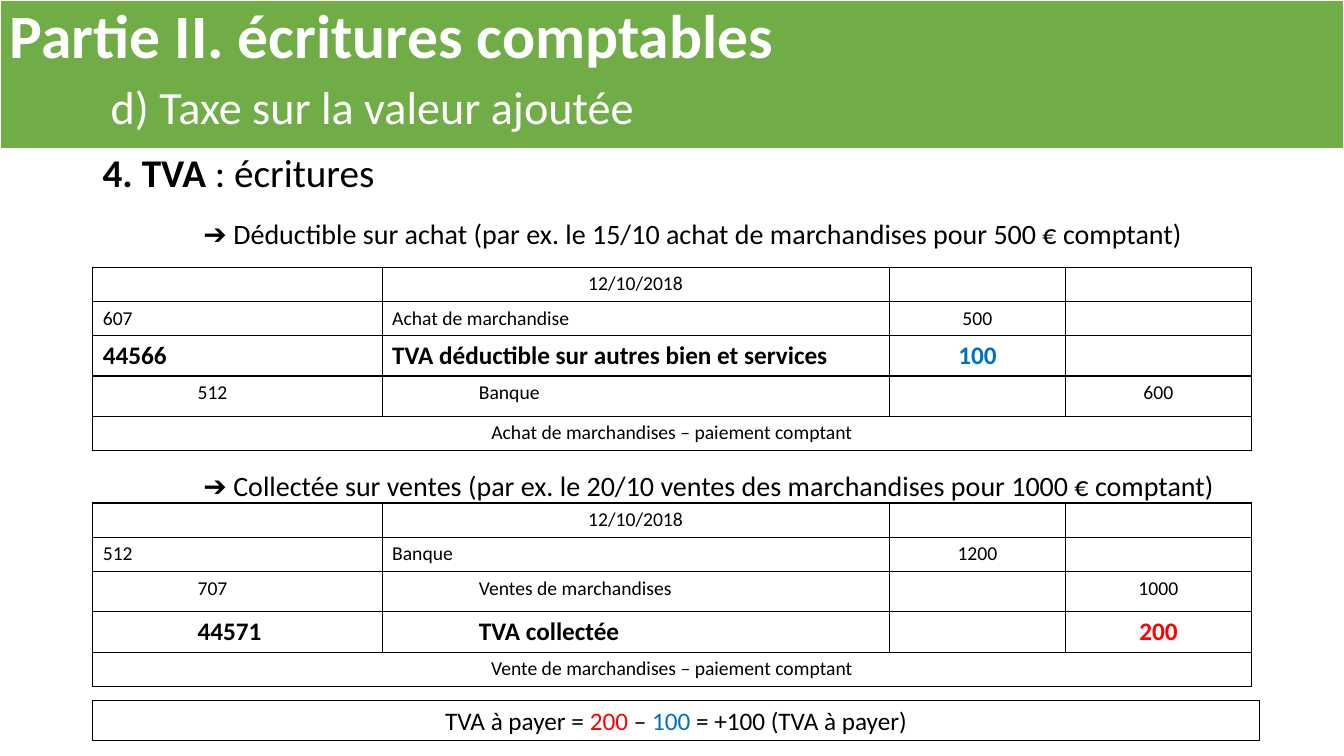
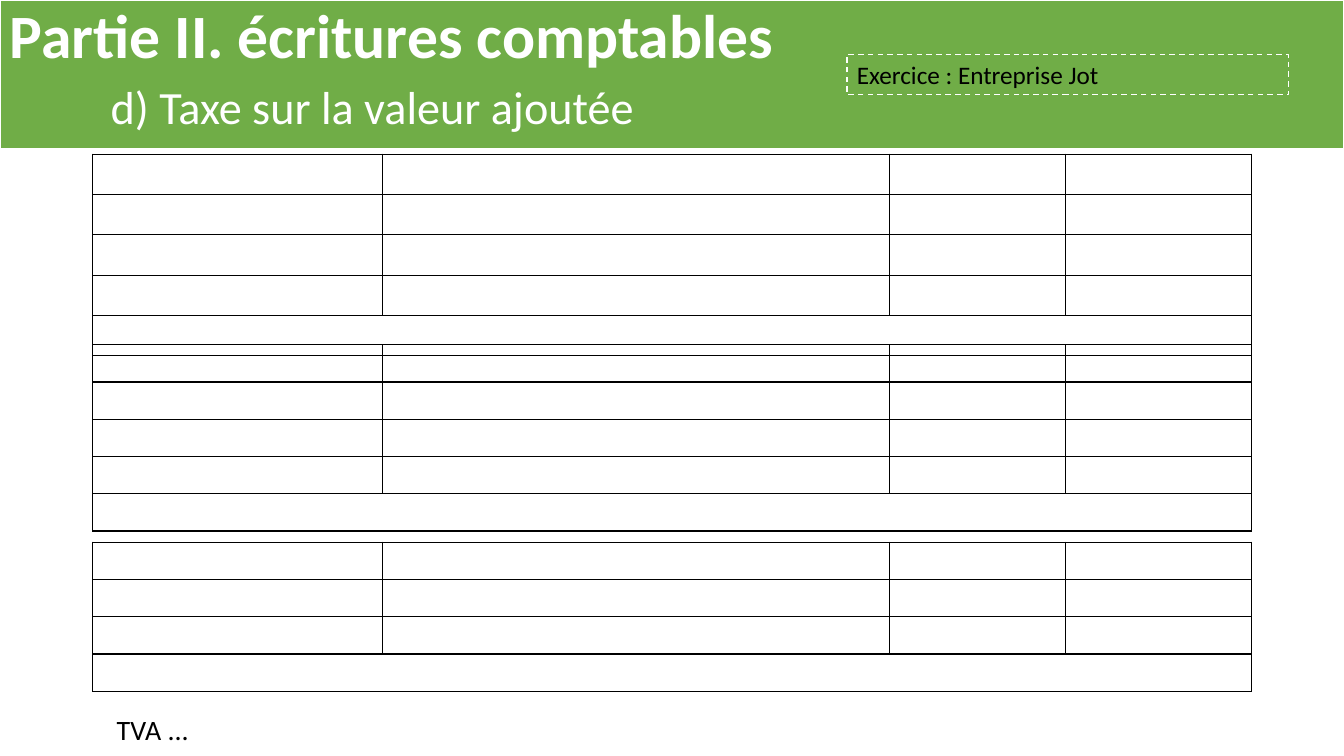
from dataclasses import dataclass

from lxml.etree import SubElement
from pptx import Presentation
from pptx.dml.color import RGBColor
from pptx.enum.dml import MSO_LINE
from pptx.enum.shapes import MSO_SHAPE
from pptx.enum.text import MSO_ANCHOR, PP_ALIGN
from pptx.oxml.ns import qn
from pptx.util import Inches, Pt

# Shared style
FONT = "Calibri"
GREEN, WHITE, BLACK = "70AD47", "FFFFFF", "000000"
BLUE, RED = "0070C0", "FF0000"
LEFT, WIDTH = 0.92, 11.5
COLUMNS = (0.94, 1.93, 0.86, 4.17, 1.75, 1.84)
PLAIN_ROW, KEY_ROW = 0.34, 0.4
TAB_STOP = 1


@dataclass
class Span:
    text: str
    size: float = 18
    color: str = BLACK
    bold: bool = False


@dataclass
class Entry:
    """A journal line; a credited account is indented by one column."""
    account: str = ""
    label: str = ""
    debit: str = ""
    credit: str = ""
    height: float = PLAIN_ROW
    credited: bool = False
    key_color: str = ""
    is_date: bool = False


@dataclass
class Journal:
    top: float
    entries: list[Entry]
    caption: str = ""
    caption_height: float = PLAIN_ROW


# Text and shapes
def rgb(color: str) -> RGBColor:
    return RGBColor.from_string(color)


def write(para, *spans: Span, align=PP_ALIGN.LEFT, spacing: float = 1, before: float = 0) -> None:
    para.alignment = align
    para.line_spacing = spacing
    para.space_before = Pt(before)
    if any("\t" in span.text for span in spans):
        stops = SubElement(para._p.get_or_add_pPr(), qn("a:tabLst"))
        SubElement(stops, qn("a:tab"), pos=str(Inches(TAB_STOP)), algn="l")
    for span in spans:
        for index, line in enumerate(span.text.split("\n")):
            if index:
                para.add_line_break()
            run = para.add_run()
            run.text = line
            run.font.name = FONT
            run.font.size = Pt(span.size)
            run.font.bold = span.bold
            run.font.color.rgb = rgb(span.color)


def add_panel(page, left: float, top: float, width: float, height: float, *spans: Span,
              fill: str = "", line: str = BLACK, weight: float = 1, dashed: bool = False,
              align=PP_ALIGN.LEFT, spacing: float = 1, bottom_margin: float = 0.05) -> None:
    panel = page.shapes.add_shape(MSO_SHAPE.RECTANGLE, Inches(left), Inches(top),
                                  Inches(width), Inches(height))
    panel.shadow.inherit = False
    if fill:
        panel.fill.solid()
        panel.fill.fore_color.rgb = rgb(fill)
    else:
        panel.fill.background()
    panel.line.color.rgb = rgb(line)
    panel.line.width = Pt(weight)
    if dashed:
        panel.line.dash_style = MSO_LINE.DASH
    frame = panel.text_frame
    frame.word_wrap = True
    frame.vertical_anchor = MSO_ANCHOR.MIDDLE
    frame.margin_bottom = Inches(bottom_margin)
    write(frame.paragraphs[0], *spans, align=align, spacing=spacing)


def add_text_frame(page, left: float, top: float, width: float, height: float):
    box = page.shapes.add_textbox(Inches(left), Inches(top), Inches(width), Inches(height))
    box.text_frame.word_wrap = True
    return box.text_frame


def add_page(deck):
    page = deck.slides.add_slide(deck.slide_layouts[6])
    add_panel(page, 0, 0, 13.33, 1.48,
              Span("Partie II. écritures comptables\n\t", 44, WHITE, True),
              Span("d) Taxe sur la valeur ajoutée", 33, WHITE),
              fill=GREEN, line=WHITE, weight=1.5, spacing=0.9, bottom_margin=0.11)
    return page


# Journal tables
def set_borders(cell, open_side: str = "") -> None:
    properties = cell._tc.get_or_add_tcPr()
    for index, side in enumerate("LRTB"):
        line = SubElement(properties, qn(f"a:ln{side}"), w=str(Pt(1)))
        if side == open_side:
            SubElement(line, qn("a:noFill"))
        else:
            fill = SubElement(line, qn("a:solidFill"))
            SubElement(fill, qn("a:srgbClr"), val=BLACK)
        properties.insert(index, line)


def fill_cell(cell, text: str, color: str = BLACK, key: bool = False,
              align=PP_ALIGN.LEFT) -> None:
    para = cell.text_frame.paragraphs[0]
    if text:
        write(para, Span(text, 18 if key else 14, color, key), align=align)
    else:
        SubElement(para._p, qn("a:endParaRPr"), sz="1000")


def add_journal(page, journal: Journal) -> None:
    heights = [entry.height for entry in journal.entries] + [journal.caption_height]
    table = page.shapes.add_table(len(heights), len(COLUMNS), Inches(LEFT), Inches(journal.top),
                                  Inches(WIDTH), Inches(sum(heights))).table
    table.first_row = table.horz_banding = False
    for column, width in zip(table.columns, COLUMNS):
        column.width = Inches(width)
    for row, height in zip(table.rows, heights):
        row.height = Inches(height)

    last = len(journal.entries)
    for row_index, entry in enumerate(journal.entries):
        cells = [table.cell(row_index, column) for column in range(len(COLUMNS))]
        texts = [""] * len(COLUMNS)
        start = 1 if entry.credited else 0
        texts[start], texts[start + 2] = entry.account, entry.label
        texts[4:] = entry.debit, entry.credit
        for column, (cell, text) in enumerate(zip(cells, texts)):
            amount = column >= 4
            centred = amount or entry.is_date
            fill_cell(cell, text, entry.key_color if amount and entry.key_color else BLACK,
                      bool(entry.key_color), PP_ALIGN.CENTER if centred else PP_ALIGN.LEFT)
            cell.fill.background()
            split = entry.credited and not amount
            set_borders(cell, "RL"[column % 2] if split else "")
        if not entry.credited:
            cells[0].merge(cells[1])
            cells[2].merge(cells[3])

    for column in range(len(COLUMNS)):
        cell = table.cell(last, column)
        fill_cell(cell, journal.caption if column == 0 else "", align=PP_ALIGN.CENTER)
        cell.fill.background()
        set_borders(cell)
    table.cell(last, 0).merge(table.cell(last, len(COLUMNS) - 1))


def blank_journal(top: float, merged: int, credited: int, height: float) -> Journal:
    entries = [Entry(height=height, credited=index >= merged)
               for index in range(merged + credited)]
    return Journal(top, entries, caption_height=height)


PURCHASE = Journal(2.65, [
    Entry(label="12/10/2018", is_date=True),
    Entry("607", "Achat de marchandise", "500"),
    Entry("44566", "TVA déductible sur autres bien et services", "100",
          height=KEY_ROW, key_color=BLUE),
    Entry("512", "Banque", credit="600", height=KEY_ROW, credited=True),
], "Achat de marchandises – paiement comptant")

SALE = Journal(4.99, [
    Entry(label="12/10/2018", is_date=True),
    Entry("512", "Banque", "1200"),
    Entry("707", "Ventes de marchandises", credit="1000", height=KEY_ROW, credited=True),
    Entry("44571", "TVA collectée", credit="200", height=KEY_ROW, credited=True,
          key_color=RED),
], "Vente de marchandises – paiement comptant")


# Slides
def build_entries_page(deck) -> None:
    page = add_page(deck)
    frame = add_text_frame(page, LEFT, 1.48, WIDTH, 4.76)
    write(frame.paragraphs[0], Span("4. TVA ", 28, bold=True), Span(": écritures", 28),
          spacing=0.9)
    write(frame.add_paragraph(), Span("\t", 28),
          Span("➔ Déductible sur achat (par ex. le 15/10 achat de marchandises "
               "pour 500 € comptant)", 20), spacing=0.9, before=10)
    write(frame.add_paragraph(),
          Span("\t➔ Collectée sur ventes (par ex. le 20/10 ventes des marchandises "
               "pour 1000 € comptant)", 20), spacing=0.9, before=157)
    for journal in (PURCHASE, SALE):
        add_journal(page, journal)
    add_panel(page, LEFT, 6.95, 11.57, 0.4, Span("TVA à payer = "), Span("200", color=RED),
              Span(" – "), Span("100", color=BLUE), Span(" = +100 (TVA à payer)"),
              fill=WHITE, align=PP_ALIGN.CENTER)


def build_exercise_page(deck) -> None:
    page = add_page(deck)
    add_panel(page, 8.4, 0.54, 4.38, 0.4, Span("Exercice : Entreprise Jot"),
              line=WHITE, dashed=True)
    for journal in (blank_journal(1.53, 3, 1, 0.4),
                    blank_journal(3.42, 2, 2, 0.37),
                    blank_journal(5.38, 2, 1, 0.37)):
        add_journal(page, journal)
    frame = add_text_frame(page, 1.06, 7.06, WIDTH, 0.34)
    write(frame.paragraphs[0], Span("TVA ...", 20), spacing=0.9)


def main() -> None:
    deck = Presentation()
    deck.slide_width, deck.slide_height = Inches(13.33), Inches(7.5)
    build_entries_page(deck)
    build_exercise_page(deck)
    deck.save("out.pptx")


if __name__ == "__main__":
    main()
